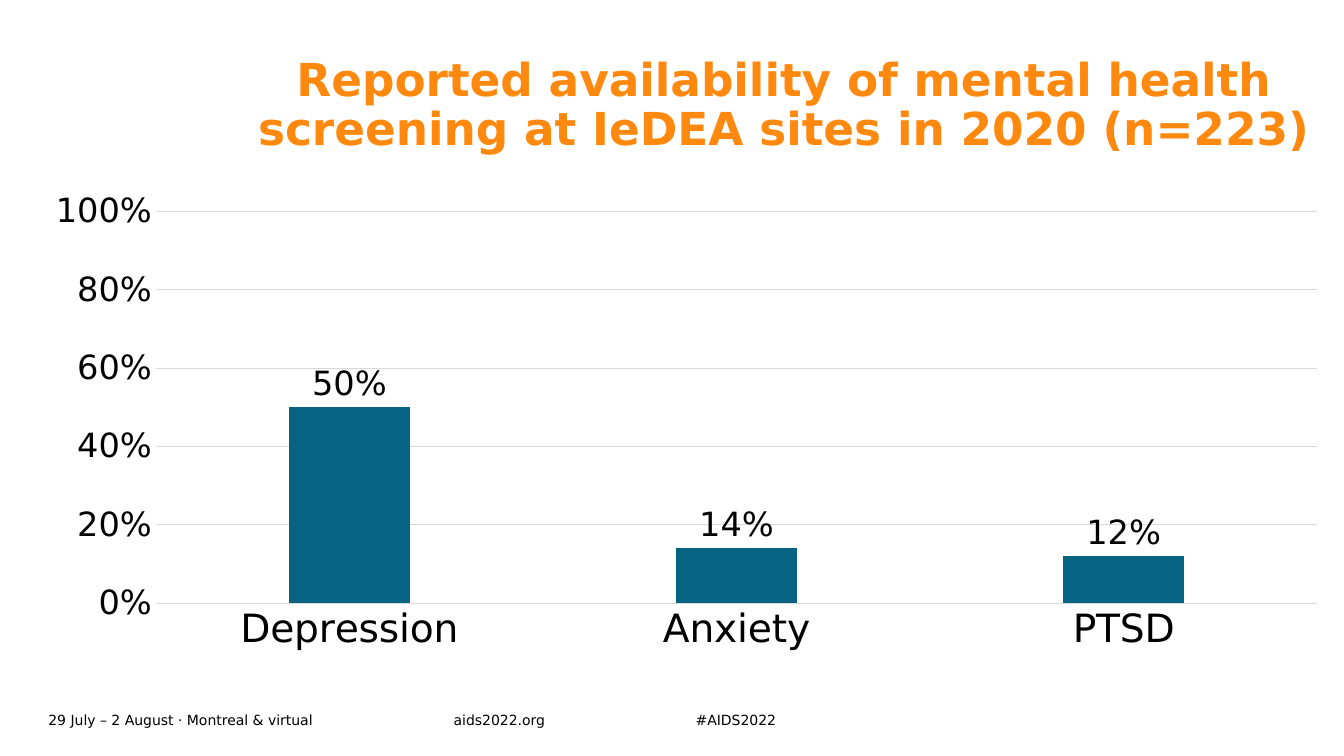
from dataclasses import dataclass

from lxml import etree
from pptx import Presentation
from pptx import util as u
from pptx.chart.axis import _BaseAxis
from pptx.chart.chart import Chart
from pptx.chart.data import CategoryChartData
from pptx.dml.color import RGBColor
from pptx.enum import chart as charts, text
from pptx.oxml.ns import qn
from pptx.slide import Slide
from pptx.text.text import Font, TextFrame

EMU_PER_PX = 9144
FONT = "DejaVu Sans"
COLORS = {"title": "FF890E", "text": "000000", "bar": "076382", "grid": "D9D9D9"}
PLOT_AREA = {"x": 0.089, "y": 0.033, "w": 0.911, "h": 0.841}
SCREENING = {"Depression": 0.5, "Anxiety": 0.14, "PTSD": 0.12}
TITLE = "Reported availability of mental health screening at IeDEA sites in 2020 (n=223)"


@dataclass
class Box:
    left: int
    top: int
    width: int
    height: int

    def emu(self) -> tuple[int, ...]:
        return tuple(px * EMU_PER_PX for px in (self.left, self.top, self.width, self.height))


@dataclass
class FooterItem:
    content: str
    left: int
    width: int


FOOTER = [
    FooterItem("29 July – 2 August · Montreal & virtual", 48, 402),
    FooterItem("aids2022.org", 450, 193),
    FooterItem("#AIDS2022", 690, 193),
]


def color(name: str) -> RGBColor:
    return RGBColor.from_string(COLORS[name])


def style_font(font: Font, size: float, color_name: str = "text", bold: bool = False) -> None:
    font.name = FONT
    font.size = u.Pt(size)
    font.bold = bold
    font.color.rgb = color(color_name)


def prepare_frame(frame: TextFrame, anchor: text.MSO_ANCHOR) -> None:
    frame.word_wrap = True
    frame.auto_size = text.MSO_AUTO_SIZE.NONE
    frame.vertical_anchor = anchor
    frame.margin_left = frame.margin_top = frame.margin_right = frame.margin_bottom = 0


def add_title(slide: Slide) -> None:
    title = slide.shapes.title
    title.left, title.top, title.width, title.height = Box(237, 57, 1081, 134).emu()
    prepare_frame(title.text_frame, text.MSO_ANCHOR.TOP)
    paragraph = title.text_frame.paragraphs[0]
    paragraph.alignment = text.PP_ALIGN.CENTER
    paragraph.line_spacing = 0.9
    run = paragraph.add_run()
    run.text = TITLE
    style_font(run.font, 32.4, "title", bold=True)


def add_footer_item(slide: Slide, item: FooterItem) -> None:
    shape = slide.shapes.add_textbox(*Box(item.left, 702, item.width, 24).emu())
    prepare_frame(shape.text_frame, text.MSO_ANCHOR.MIDDLE)
    run = shape.text_frame.paragraphs[0].add_run()
    run.text = item.content
    style_font(run.font, 10)


def style_axis(axis: _BaseAxis, size: int) -> None:
    axis.major_tick_mark = axis.minor_tick_mark = charts.XL_TICK_MARK.NONE
    style_font(axis.tick_labels.font, size)


def place_plot_area(chart: Chart) -> None:
    plot_area = chart.element.find(".//" + qn("c:plotArea"))
    for layout in plot_area.findall(qn("c:layout")):
        plot_area.remove(layout)
    layout = etree.Element(qn("c:layout"))
    manual = etree.SubElement(layout, qn("c:manualLayout"))
    settings = {"layoutTarget": "inner", "xMode": "edge", "yMode": "edge", **PLOT_AREA}
    for tag, value in settings.items():
        etree.SubElement(manual, qn(f"c:{tag}")).set("val", str(value))
    plot_area.insert(0, layout)


def add_screening_chart(slide: Slide) -> None:
    data = CategoryChartData(number_format="0%")
    data.categories = list(SCREENING)
    data.add_series("Series 1", list(SCREENING.values()))
    frame = slide.shapes.add_chart(
        charts.XL_CHART_TYPE.COLUMN_CLUSTERED, *Box(42, 190, 1265, 467).emu(), data
    )
    chart = frame.chart
    chart.has_title = False
    chart.has_legend = False
    style_font(chart.font, 10)
    place_plot_area(chart)

    categories, values = chart.category_axis, chart.value_axis
    style_axis(categories, 28)
    style_axis(values, 24)
    values.minimum_scale, values.maximum_scale, values.major_unit = 0, 1, 0.2
    values.tick_labels.number_format = "0%"
    values.tick_labels.number_format_is_linked = False
    values.format.line.fill.background()
    for line in (categories.format.line, values.major_gridlines.format.line):
        line.color.rgb = color("grid")
        line.width = u.Pt(0.75)

    plot = chart.plots[0]
    plot.vary_by_categories = False
    plot.gap_width = 219
    plot.overlap = -27
    series = plot.series[0]
    series.format.fill.solid()
    series.format.fill.fore_color.rgb = color("bar")
    labels = series.data_labels
    labels.show_value = True
    labels.number_format = "0%"
    labels.number_format_is_linked = False
    labels.position = charts.XL_LABEL_POSITION.OUTSIDE_END
    style_font(labels.font, 24)


def main() -> None:
    presentation = Presentation()
    presentation.slide_width = 1333 * EMU_PER_PX
    presentation.slide_height = 750 * EMU_PER_PX
    slide = presentation.slides.add_slide(presentation.slide_layouts.get_by_name("Title Only"))
    for item in FOOTER:
        add_footer_item(slide, item)
    add_title(slide)
    add_screening_chart(slide)
    presentation.save("out.pptx")


if __name__ == "__main__":
    main()
